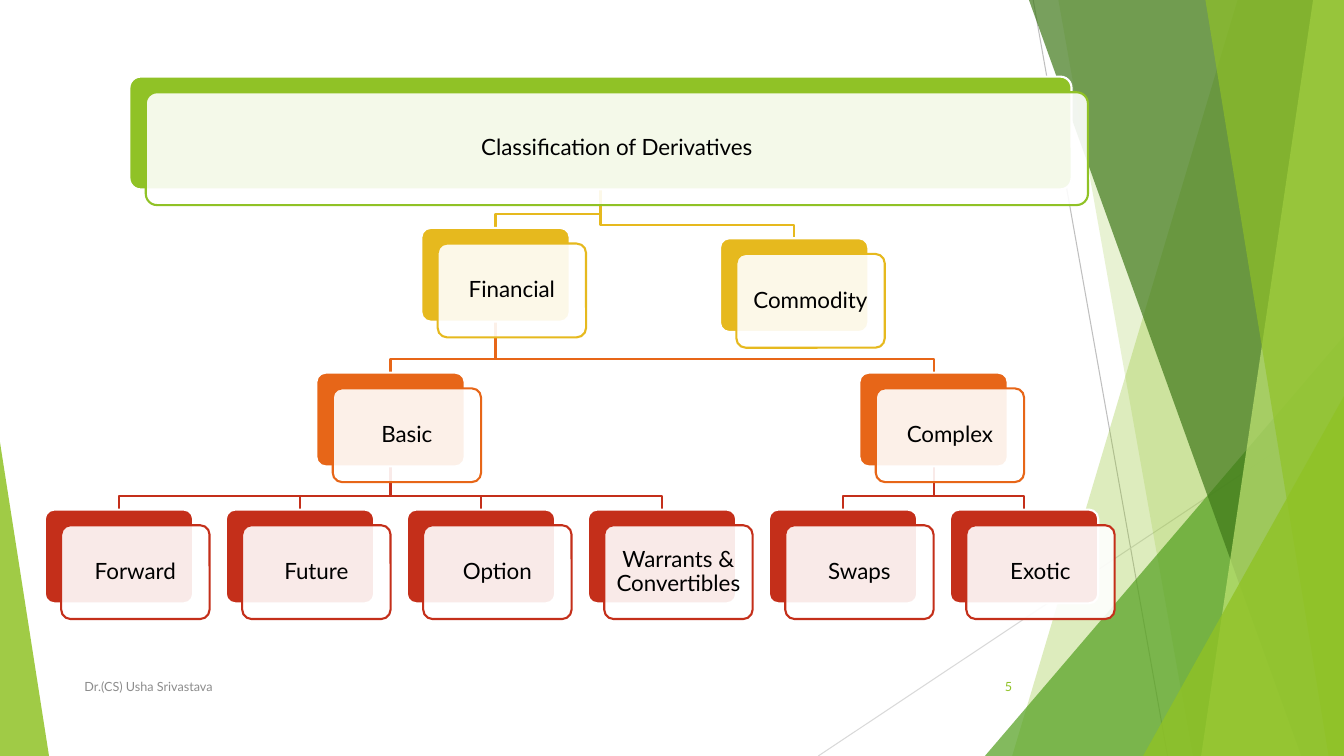
import pptx
import pptx.util
import pptx.dml.color
import pptx.enum.shapes
import pptx.enum.text
import pptx.oxml.ns
import lxml.etree

Pt = pptx.util.Pt
Preset = pptx.enum.shapes.MSO_SHAPE
Align = pptx.enum.text.PP_ALIGN
qn = pptx.oxml.ns.qn


def paint(fill, colour, opacity=100):
    fill.solid()
    fill.fore_color.rgb = pptx.dml.color.RGBColor.from_string(colour)
    if opacity < 100:
        tint = fill._xPr.find(qn("a:solidFill"))[0]
        lxml.etree.SubElement(tint, qn("a:alpha")).set("val", str(opacity * 1000))


def write(holder, text, size=16, colour="000000", align=Align.CENTER, inset=5, spacing=0.9):
    frame = holder.text_frame
    frame.word_wrap = True
    frame.auto_size = pptx.enum.text.MSO_AUTO_SIZE.NONE
    frame.vertical_anchor = pptx.enum.text.MSO_ANCHOR.MIDDLE
    frame.margin_left = frame.margin_right = Pt(inset)
    frame.margin_top = frame.margin_bottom = Pt(inset)
    paragraph = frame.paragraphs[0]
    paragraph.alignment = align
    paragraph.line_spacing = spacing
    run = paragraph.add_run()
    run.text = text
    run.font.name = "Lato"
    run.font.size = Pt(size)
    paint(run.font.fill, colour)


deck = pptx.Presentation()
deck.slide_width, deck.slide_height = Pt(960), Pt(540)
slide = deck.slides.add_slide(deck.slide_layouts[5])
shapes = slide.shapes

hairlines = [(738, 0, 834, 540, "BFBFBF"), (960, 290, 584.5, 540, "D9D9D9")]
for x1, y1, x2, y2, colour in hairlines:
    hairline = shapes.add_connector(
        pptx.enum.shapes.MSO_CONNECTOR.STRAIGHT, Pt(x1), Pt(y1), Pt(x2), Pt(y2)
    )
    paint(hairline.line.fill, colour)
    hairline.line.width = Pt(0.75)
    lxml.etree.SubElement(hairline._element.spPr, qn("a:effectLst"))

facets = [
    ("band", (884, 723), "90C226", 30),
    ("band", (756, 852), "90C226", 20),
    ("triangle", (703.5, 240, 256.5, 1), "54A021", 72),
    ("band", (735, 929.5), "3F7819", 70),
    ("band", (938, 858), "C0E474", 70),
    ("band", (861, 949), "90C226", 65),
    ("triangle", (816.5, 283, 143.5, 1), "90C226", 80),
    ("triangle", (0, 316, 35, 0), "90C226", 85),
]
for kind, geometry, colour, opacity in facets:
    if kind == "band":
        top_x, bottom_x = geometry
        outline = shapes.build_freeform(Pt(top_x), 0)
        outline.add_line_segments(
            [(Pt(960), 0), (Pt(960), Pt(540)), (Pt(bottom_x), Pt(540))], close=True
        )
        facet = outline.convert_to_shape()
    else:
        left, top, width, apex = geometry
        facet = shapes.add_shape(
            Preset.ISOSCELES_TRIANGLE, Pt(left), Pt(top), Pt(width), Pt(540 - top)
        )
        facet.adjustments[0] = apex
    facet.shadow.inherit = False
    facet.line.fill.background()
    paint(facet.fill, colour, opacity)

root = "Classification of Derivatives"
green, gold, orange, red = "90C226", "E6B91E", "E76618", "C42F1A"
first_centre, pitch = 85, 129.3
drop = 9.7
offset_x, offset_y, text_gap = 11.7, 11.2, 2

tree = {
    root: (None, 2.66, 54.7, green),
    "Financial": (root, 2.08, 162.8, gold),
    "Commodity": (root, 3.73, 170.2, gold),
    "Basic": ("Financial", 1.5, 266.2, orange),
    "Complex": ("Financial", 4.5, 266.2, orange),
}
leaves = {
    "Basic": ["Forward", "Future", "Option", "Warrants & Convertibles"],
    "Complex": ["Swaps", "Exotic"],
}
column = 0
for parent, names in leaves.items():
    for name in names:
        tree[name] = (parent, column, 364, red)
        column += 1

boxes = {}
for name, (parent, column, top, colour) in tree.items():
    width, height = (673, 80.6) if name == root else (106, 67)
    boxes[name] = (first_centre + pitch * column, top, width, height)

for name, (parent, column, top, colour) in tree.items():
    if parent is None:
        continue
    centre = boxes[name][0]
    parent_centre, parent_top, parent_width, parent_height = boxes[parent]
    bend = Pt(top - drop)
    route = shapes.build_freeform(Pt(parent_centre), Pt(parent_top + parent_height))
    route.add_line_segments(
        [(Pt(parent_centre), bend), (Pt(centre), bend), (Pt(centre), Pt(top))], close=False
    )
    branch = route.convert_to_shape()
    branch.shadow.inherit = False
    branch.fill.background()
    paint(branch.line.fill, colour)
    branch.line.width = Pt(1.5)

for name, (centre, top, width, height) in boxes.items():
    colour = tree[name][3]
    left = centre - width / 2
    layers = [(0, 0, colour, 100, "FFFFFF"), (offset_x, offset_y, "FFFFFF", 90, colour)]
    for dx, dy, fill_colour, opacity, edge_colour in layers:
        card = shapes.add_shape(
            Preset.ROUNDED_RECTANGLE, Pt(left + dx), Pt(top + dy), Pt(width), Pt(height)
        )
        card.adjustments[0] = 0.1
        card.shadow.inherit = False
        paint(card.fill, fill_colour, opacity)
        paint(card.line.fill, edge_colour)
        card.line.width = Pt(1.5)
    if name == root:
        label = shapes.title
        label._element.getparent().append(label._element)
    else:
        label = shapes.add_textbox(0, 0, 0, 0)
    label.left, label.top = Pt(left + offset_x + text_gap), Pt(top + offset_y + text_gap)
    label.width, label.height = Pt(width - 2 * text_gap), Pt(height - 2 * text_gap)
    write(label, name)

footers = [
    ("Dr.(CS) Usha Srivastava", 53.3, 496, "8C8C8C", Align.LEFT),
    ("5", 676, 54, "90C226", Align.RIGHT),
]
for text, left, width, colour, align in footers:
    footer = shapes.add_textbox(Pt(left), Pt(476), Pt(width), Pt(28.8))
    write(footer, text, size=9, colour=colour, align=align, inset=7.2, spacing=1.0)

deck.save("out.pptx")
